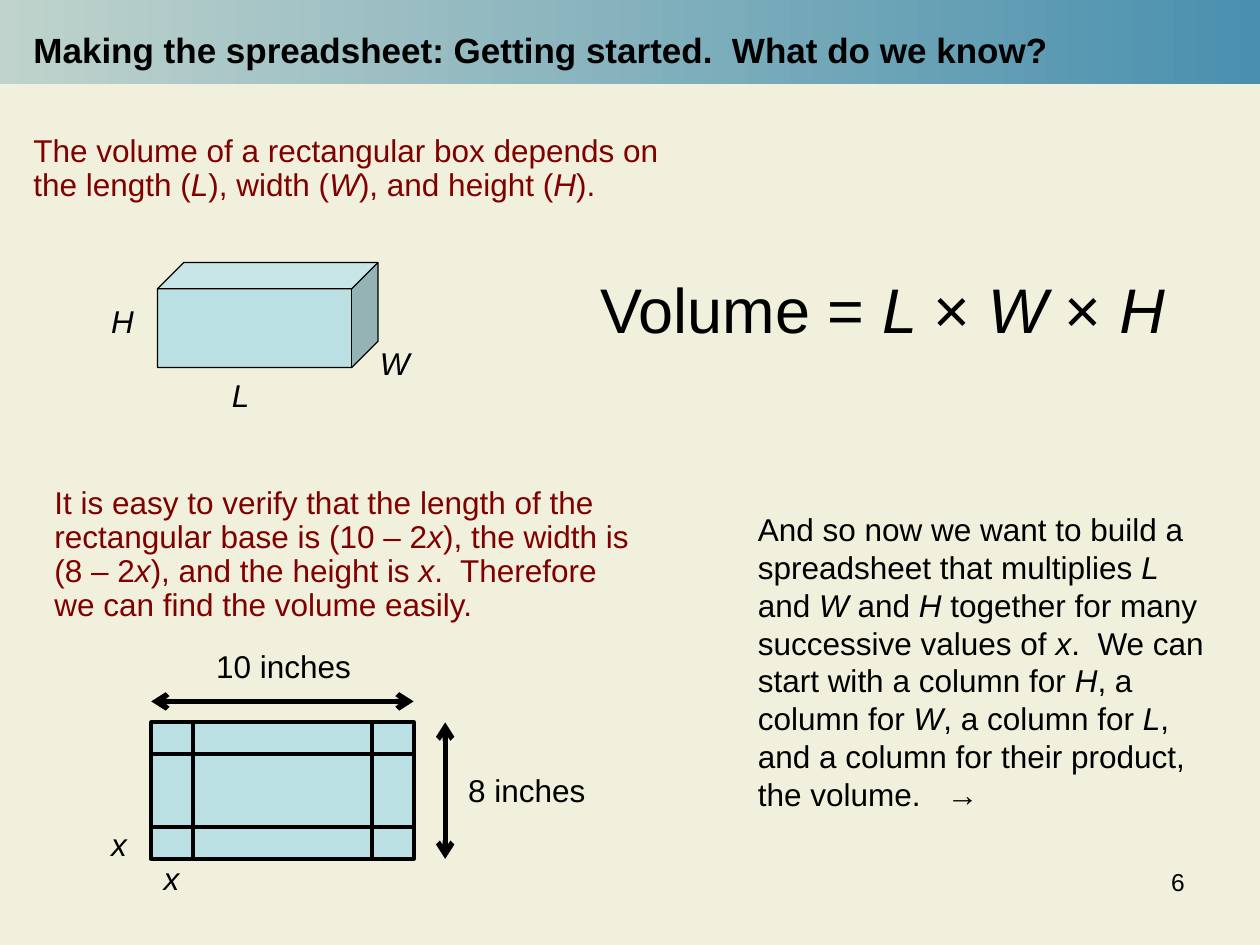
from lxml.etree import SubElement
from pptx import Presentation
from pptx.dml.color import RGBColor
from pptx.enum.shapes import MSO_CONNECTOR, MSO_SHAPE
from pptx.enum.text import MSO_ANCHOR, PP_ALIGN
from pptx.oxml.ns import qn
from pptx.util import Inches, Pt

COLORS = {
    "page": "F0F0DC", "pale": "BFD3CC", "deep": "4A90AE",
    "box": "BBE0E3", "ink": "000000", "red": "800000",
}
COLS, ROWS = 120, 90
WIDE, HIGH = Inches(10), Inches(7.5)


def color(name):
    return RGBColor.from_string(COLORS[name])


def place(x, y):
    return round(WIDE * x / COLS), round(HIGH * y / ROWS)


def add_block(slide, kind, x, y, w, h, line):
    shape = slide.shapes.add_shape(kind, *place(x, y), *place(w, h))
    shape.shadow.inherit = False
    shape.fill.solid()
    shape.fill.fore_color.rgb = color("box")
    shape.line.color.rgb = color("ink")
    shape.line.width = Pt(line)
    return shape


def add_band(slide, h):
    band = slide.shapes.add_shape(MSO_SHAPE.RECTANGLE, 0, 0, *place(COLS, h))
    band.shadow.inherit = False
    band.line.fill.background()
    band.fill.gradient()
    band.fill.gradient_angle = 0
    for stop, name in zip(band.fill.gradient_stops, ("pale", "deep")):
        stop.color.rgb = color(name)


def add_line(slide, start, end, width=2.25, heads=False):
    line = slide.shapes.add_connector(
        MSO_CONNECTOR.STRAIGHT, *place(*start), *place(*end))
    line.line.color.rgb = color("ink")
    line.line.width = Pt(width)
    if heads:
        node = line.line._get_or_add_ln()
        for tag in ("a:headEnd", "a:tailEnd"):
            SubElement(node, qn(tag), type="arrow")
    SubElement(line._element.spPr, qn("a:effectLst"))


def add_text(slide, text, x, y, w, h, size=18, ink="ink", bold=False,
             wrap=True, space=None, align=PP_ALIGN.LEFT,
             anchor=MSO_ANCHOR.TOP):
    frame = slide.shapes.add_textbox(*place(x, y), *place(w, h)).text_frame
    frame.word_wrap = wrap
    frame.vertical_anchor = anchor
    para = frame.paragraphs[0]
    para.alignment = align
    if space:
        para.line_spacing = space
    for i, part in enumerate(text.split("*")):
        if part:
            run = para.add_run()
            run.text = part
            run.font.name = "Arial"
            run.font.size = Pt(size)
            run.font.bold = bold
            run.font.italic = i % 2 == 1
            run.font.color.rgb = color(ink)


def add_label(slide, text, x, y, w):
    add_text(slide, text, x, y, w, 4.8, wrap=False)


def add_sheet(slide, x, y, w, h):
    add_block(slide, MSO_SHAPE.RECTANGLE, x, y, w, h, 2.25)
    for row in (y + 3, y + h - 3):
        add_line(slide, (x, row), (x + w, row))
    for col in (x + 4, x + w - 4):
        add_line(slide, (col, y), (col, y + h))
    add_line(slide, (x, y - 2), (x + w, y - 2), 3, True)
    add_line(slide, (x + w + 3, y), (x + w + 3, y + h), 3, True)
    add_label(slide, "10 inches", 19.4, 61, 16)
    add_label(slide, "8 inches", 43.4, 72.8, 14)
    add_label(slide, "*x*", 14.4, 81.2, 4)
    add_label(slide, "*x*", 9.4, 78, 4)


def add_cube(slide):
    cube = add_block(slide, MSO_SHAPE.CUBE, 15, 25, 21, 10, 0.75)
    cube.adjustments[0] = 0.25
    add_label(slide, "*L*", 20.9, 35.2, 4.1)
    add_label(slide, "*W*", 35, 32.2, 5.3)
    add_label(slide, "*H*", 9.4, 28.2, 4.6)


def main():
    deck = Presentation()
    deck.slide_width, deck.slide_height = WIDE, HIGH
    slide = deck.slides.add_slide(deck.slide_layouts[6])
    slide.background.fill.solid()
    slide.background.fill.fore_color.rgb = color("page")
    add_band(slide, 8)
    add_text(slide, "6", 86, 82, 28, 6.2, size=14, align=PP_ALIGN.RIGHT)
    add_text(
        slide,
        "And so now we want to build a spreadsheet that multiplies *L* and "
        "*W* and *H* together for many successive values of *x*.  We can "
        "start with a column for *H*, a column for *W*, a column for *L*, "
        "and a column for their product, the volume.   →",
        71, 48, 46, 30)
    add_sheet(slide, 14.4, 68.8, 25, 13)
    add_text(
        slide,
        "The volume of a rectangular box depends on the length (*L*), "
        "width (*W*), and height (*H*).",
        2, 12.3, 62, 7.7, ink="red", space=0.9)
    add_text(
        slide,
        "It is easy to verify that the length of the rectangular base is "
        "(10 – 2*x*), the width is (8 – 2*x*), and the height is *x*.  "
        "Therefore we can find the volume easily.",
        4, 45.8, 58, 14.2, ink="red", space=0.9)
    add_cube(slide)
    add_text(slide, "Volume = *L *× *W *× *H*", 56, 25.2, 59, 8.4, size=36)
    add_text(
        slide, "Making the spreadsheet: Getting started.  What do we know?",
        2, 2, 104, 5.4, size=20, bold=True, anchor=MSO_ANCHOR.MIDDLE)
    deck.save("out.pptx")


if __name__ == "__main__":
    main()
